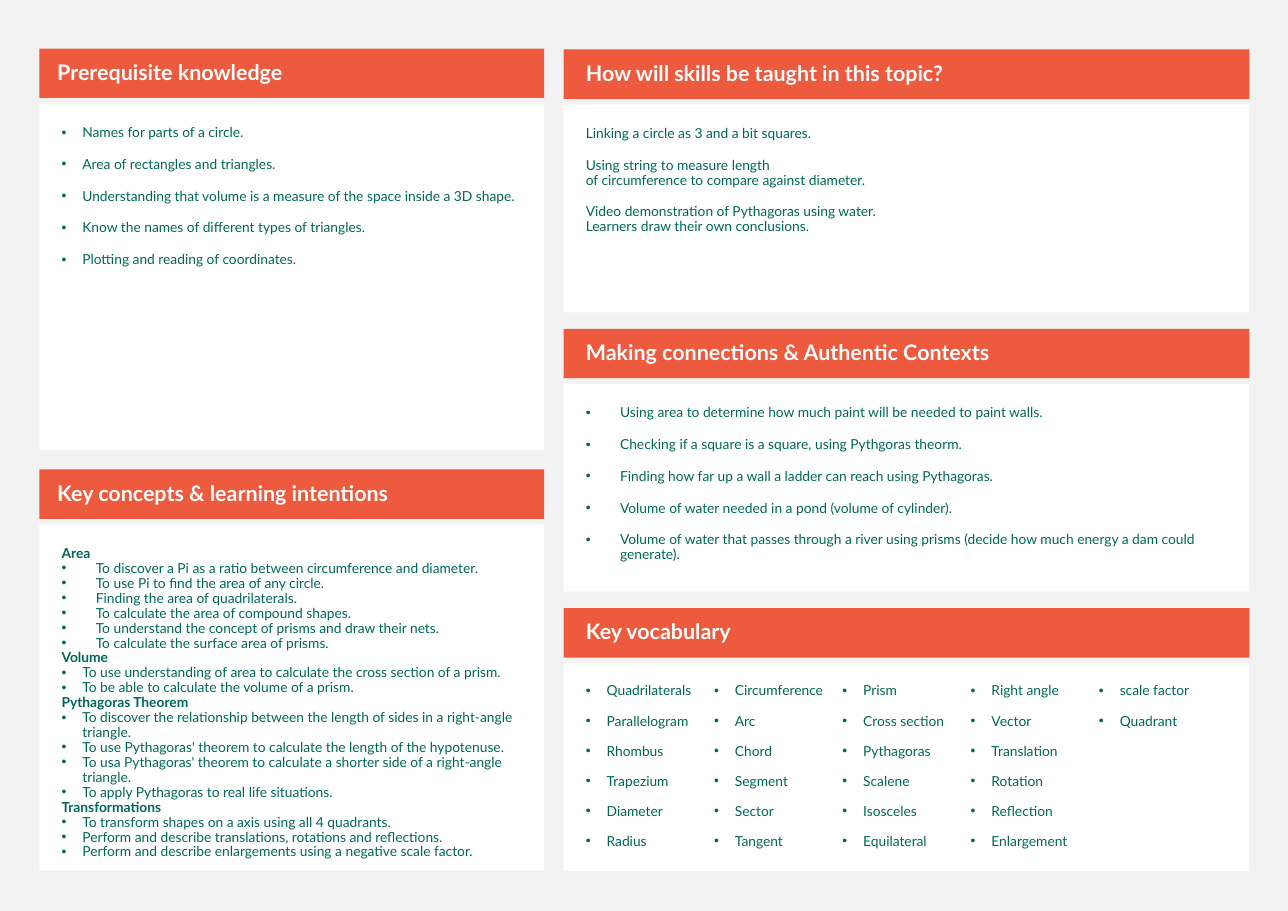
from lxml.etree import SubElement
from pptx import Presentation
from pptx.dml.color import RGBColor
from pptx.enum.shapes import MSO_SHAPE as Shape
from pptx.enum.text import MSO_ANCHOR as Anchor, PP_ALIGN as Align
from pptx.oxml.ns import qn
from pptx.util import Cm, Pt

GREY = RGBColor(0xF2, 0xF2, 0xF2)
ORANGE = RGBColor(0xED, 0x5A, 0x3E)
GREEN = RGBColor(0x00, 0x67, 0x58)
WHITE = RGBColor(0xFF, 0xFF, 0xFF)

FONT = "Lato"
HEADER_H = 1.14
BODY_OFFSET = 1.27
INSET = 0.51
NARROW, WIDE = 0.48, 0.79

LEFT_X, LEFT_W, LEFT_H = 0.91, 11.64, 7.98
LEFT_Y, LEFT_STEP = 1.12, 9.7
RIGHT_X, RIGHT_W, RIGHT_H = 13.0, 15.81, 4.79
RIGHT_Y, RIGHT_STEP = 1.14, 6.44

PREREQUISITES = [
    "Names for parts of a circle.",
    "Area of rectangles and triangles.",
    "Understanding that volume is a measure of the space inside a 3D shape.",
    "Know the names of different types of triangles.",
    "Plotting and reading of coordinates.",
]
CONCEPTS = [
    ("Area", WIDE, [
        "To discover a Pi as a ratio between circumference and diameter.",
        "To use Pi to find the area of any circle.",
        "Finding the area of quadrilaterals.",
        "To calculate the area of compound shapes.",
        "To understand the concept of prisms and draw their nets.",
        "To calculate the surface area of prisms.",
    ]),
    ("Volume", NARROW, [
        "To use understanding of area to calculate the cross section of a prism.",
        "To be able to calculate the volume of a prism.",
    ]),
    ("Pythagoras Theorem", NARROW, [
        "To discover the relationship between the length of sides in a right-angle triangle.",
        "To use Pythagoras' theorem to calculate the length of the hypotenuse.",
        "To usa Pythagoras' theorem to calculate a shorter side of a right-angle triangle.",
        "To apply Pythagoras to real life situations.",
    ]),
    ("Transformations", NARROW, [
        "To transform shapes on a axis using all 4 quadrants.",
        "Perform and describe translations, rotations and reflections.",
        "Perform and describe enlargements using a negative scale factor.",
    ]),
]
SKILLS = [
    "Linking a circle as 3 and a bit squares.",
    "Using string to measure length\nof circumference to compare against diameter.",
    "Video demonstration of Pythagoras using water. Learners draw their own conclusions.",
]
CONNECTIONS = [
    "Using area to determine how much paint will be needed to paint walls.",
    "Checking if a square is a square, using Pythgoras theorm.",
    "Finding how far up a wall a ladder can reach using Pythagoras.",
    "Volume of water needed in a pond (volume of cylinder).",
    "Volume of water that passes through a river using prisms "
    "(decide how much energy a dam could generate).",
]
VOCABULARY = [
    "Quadrilaterals", "Parallelogram", "Rhombus", "Trapezium", "Diameter", "Radius",
    "Circumference", "Arc", "Chord", "Segment", "Sector", "Tangent",
    "Prism", "Cross section", "Pythagoras", "Scalene", "Isosceles", "Equilateral",
    "Right angle", "Vector", "Translation", "Rotation", "Reflection", "Enlargement",
    "scale factor", "Quadrant",
]


def add_box(s, x, y, w, h, fill):
    sp = s.shapes.add_shape(Shape.RECTANGLE, Cm(x), Cm(y), Cm(w), Cm(h))
    sp.shadow.inherit = False
    sp.fill.solid()
    sp.fill.fore_color.rgb = fill
    sp.line.fill.background()
    tf = sp.text_frame
    tf.word_wrap = True
    return tf


def set_insets(tf, left, top, right, bottom):
    tf.margin_left, tf.margin_top = Cm(left), Cm(top)
    tf.margin_right, tf.margin_bottom = Cm(right), Cm(bottom)


def write(p, text, size=9, color=GREEN, bold=False, before=11, line=0.9, indent=0):
    p.text = text
    p.alignment = Align.LEFT
    p.line_spacing = line
    p.space_before = Pt(before)
    for r in p.runs:
        r.font.name = FONT
        r.font.size = Pt(size)
        r.font.bold = bold
        r.font.color.rgb = color
    if indent:
        add_bullet(p, indent)


def add_bullet(p, indent):
    pPr = p._p.get_or_add_pPr()
    pPr.set("marL", str(Cm(indent)))
    pPr.set("indent", str(-Cm(indent)))
    SubElement(pPr, qn("a:buFont")).set("typeface", "Arial")
    SubElement(pPr, qn("a:buChar")).set("char", "•")


def add_header(s, title, x, y, w, inset):
    tf = add_box(s, x, y, w, HEADER_H, ORANGE)
    tf.vertical_anchor = Anchor.MIDDLE
    set_insets(tf, inset, 0.13, 0.25, 0.13)
    write(tf.paragraphs[0], title, size=14, color=WHITE, bold=True)


def add_panel(s, title, x, y, w, h, header_inset, columns=1):
    tf = add_box(s, x, y + BODY_OFFSET, w, h, WHITE)
    tf.vertical_anchor = Anchor.TOP
    set_insets(tf, INSET, INSET, INSET, INSET)
    if columns > 1:
        tf._txBody.bodyPr.set("numCol", str(columns))
    add_header(s, title, x, y, w, header_inset)
    return tf


def add_left_panel(s, row, title):
    return add_panel(s, title, LEFT_X, LEFT_Y + row * LEFT_STEP, LEFT_W, LEFT_H, 0.41)


def add_right_panel(s, row, title, columns=1):
    y = RIGHT_Y + row * RIGHT_STEP
    return add_panel(s, title, RIGHT_X, y, RIGHT_W, RIGHT_H, INSET, columns)


def fill_list(tf, items, **style):
    for i, text in enumerate(items):
        p = tf.add_paragraph() if i else tf.paragraphs[0]
        write(p, text, **style)


def fill_concepts(tf):
    for i, (heading, indent, items) in enumerate(CONCEPTS):
        p = tf.add_paragraph() if i else tf.paragraphs[0]
        write(p, heading, bold=True, before=0)
        for text in items:
            write(tf.add_paragraph(), text, before=0, indent=indent)


def main():
    prs = Presentation()
    prs.slide_width, prs.slide_height = Cm(29.7), Cm(21)
    s = prs.slides.add_slide(prs.slide_layouts[6])
    s.background.fill.solid()
    s.background.fill.fore_color.rgb = GREY

    fill_list(add_left_panel(s, 0, "Prerequisite knowledge"), PREREQUISITES, indent=NARROW)
    fill_concepts(add_left_panel(s, 1, "Key concepts & learning intentions"))
    fill_list(add_right_panel(s, 0, "How will skills be taught in this topic?", 2), SKILLS)
    fill_list(add_right_panel(s, 1, "Making connections & Authentic Contexts"),
              CONNECTIONS, indent=WIDE)
    fill_list(add_right_panel(s, 2, "Key vocabulary", 5), VOCABULARY, indent=NARROW, line=0.8)

    prs.save("out.pptx")


if __name__ == "__main__":
    main()
